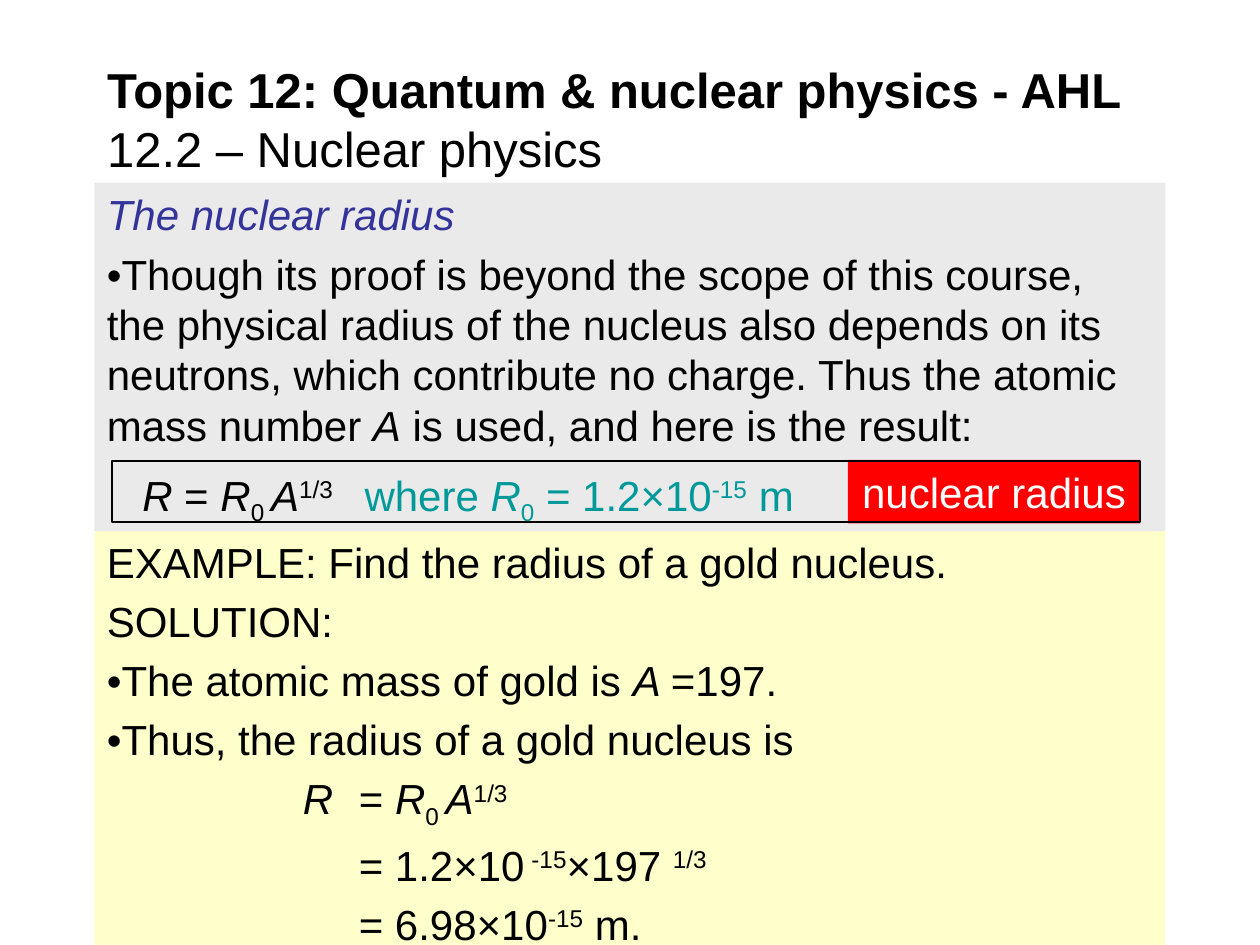
import dataclasses
import typing

import pptx
import pptx.dml.color
import pptx.enum.shapes
import pptx.enum.text
import pptx.oxml.ns
import pptx.util
from lxml import etree

Pt = pptx.util.Pt
RGBColor = pptx.dml.color.RGBColor
ALIGN = pptx.enum.text.PP_ALIGN
ANCHOR = pptx.enum.text.MSO_ANCHOR

BLACK = RGBColor(0x00, 0x00, 0x00)
WHITE = RGBColor(0xFF, 0xFF, 0xFF)
GREY = RGBColor(0xEA, 0xEA, 0xEA)
CREAM = RGBColor(0xFF, 0xFF, 0xCC)
RED = RGBColor(0xFF, 0x00, 0x00)
NAVY = RGBColor(0x33, 0x33, 0x99)
TEAL = RGBColor(0x00, 0x99, 0x99)

MARGIN = 54
CONTENT_WIDTH = 612
SUBSCRIPT, SUPERSCRIPT = -25000, 30000


@dataclasses.dataclass(frozen=True)
class Run:
    text: str
    italic: bool = False
    bold: bool = False
    baseline: int = 0
    color: RGBColor = BLACK
    size: float = 24


@dataclasses.dataclass(frozen=True)
class Line:
    runs: tuple[Run, ...]
    space_before: float = 5
    line_spacing: float = 1.0
    alignment: typing.Any = ALIGN.LEFT
    tab_stops: tuple[float, ...] = ()


@dataclasses.dataclass(frozen=True)
class Box:
    left: float
    top: float
    width: float
    height: float
    fill: RGBColor | None = None
    outline: RGBColor | None = None
    lines: tuple[Line, ...] = ()


def radius_formula(color: RGBColor = BLACK) -> tuple[Run, ...]:
    """Runs of R0 A^(1/3)."""
    return (Run("R", italic=True, color=color), Run("0 ", baseline=SUBSCRIPT, color=color),
            Run("A", italic=True, color=color), Run("1/3", baseline=SUPERSCRIPT, color=color))


EQUATION_TABS = (112, 144)

EXAMPLE = Box(MARGIN, 303, CONTENT_WIDTH, 237, fill=CREAM, lines=(
    Line((Run("EXAMPLE: Find the radius of a gold nucleus."),)),
    Line((Run("SOLUTION:"),)),
    Line((Run("•The atomic mass of gold is "), Run("A ", italic=True), Run("=197."))),
    Line((Run("•Thus, the radius of a gold nucleus is"),)),
    Line((Run("\tR", italic=True), Run(" \t= "), *radius_formula()), tab_stops=EQUATION_TABS),
    Line((Run("\t\t= 1.2×10"), Run(" -15", baseline=SUPERSCRIPT), Run("×197 "),
          Run("1/3", baseline=SUPERSCRIPT)), tab_stops=EQUATION_TABS),
    Line((Run("\t\t= 6.98×10"), Run("-15", baseline=SUPERSCRIPT), Run(" m.")),
         tab_stops=EQUATION_TABS),
))

EXPLANATION = Box(MARGIN, 104.4, CONTENT_WIDTH, 199.2, fill=GREY, lines=(
    Line((Run("The nuclear radius", italic=True, color=NAVY),), space_before=0),
    Line((Run("•Though its proof is beyond the scope of this course, the physical radius "
              "of the nucleus also depends on its neutrons, which contribute no charge. "
              "Thus the atomic mass number "),
          Run("A", italic=True), Run(" is used, and here is the result:"))),
))

FORMULA_PARTS = (
    Box(74.2, 265, 431.3, 28, lines=(
        Line((Run("R", italic=True), Run(" = "), *radius_formula(),
              Run("\twhere ", color=TEAL), Run("R", italic=True, color=TEAL),
              Run("0", baseline=SUBSCRIPT, color=TEAL), Run(" = 1.2×10", color=TEAL),
              Run("-15", baseline=SUPERSCRIPT, color=TEAL), Run(" m", color=TEAL)),
             line_spacing=0.9, tab_stops=(127,)),)),
    Box(484.5, 262.8, 167, 36.4, fill=RED, lines=(
        Line((Run("nuclear radius", color=WHITE),), alignment=ALIGN.CENTER),)),
    Box(64, 263.5, 587.5, 35, outline=BLACK),
)

TITLE_RUNS = (Run("Topic 12: Quantum & nuclear physics - AHL", bold=True, size=28),
              Run("12.2 – Nuclear physics", size=28))


def add_run(paragraph: typing.Any, content: Run) -> None:
    run = paragraph.add_run()
    run.text = content.text
    run.font.color.rgb = content.color
    settings = {"name": "Arial", "size": Pt(content.size),
                "italic": content.italic, "bold": content.bold}
    for name, value in settings.items():
        setattr(run.font, name, value)
    if content.baseline:
        run.font._element.set("baseline", str(content.baseline))


def set_tab_stops(paragraph: typing.Any, positions: tuple[float, ...]) -> None:
    qn = pptx.oxml.ns.qn
    tab_list = etree.SubElement(paragraph._p.get_or_add_pPr(), qn("a:tabLst"))
    for position in positions:
        etree.SubElement(tab_list, qn("a:tab"), pos=str(int(Pt(position))), algn="l")


def write_lines(frame: typing.Any, lines: tuple[Line, ...]) -> None:
    frame.word_wrap = True
    frame.vertical_anchor = ANCHOR.TOP
    for index, line in enumerate(lines):
        paragraph = frame.add_paragraph() if index else frame.paragraphs[0]
        settings = {"alignment": line.alignment, "space_before": Pt(line.space_before),
                    "line_spacing": line.line_spacing}
        for name, value in settings.items():
            setattr(paragraph, name, value)
        if line.tab_stops:
            set_tab_stops(paragraph, line.tab_stops)
        for content in line.runs:
            add_run(paragraph, content)


def add_box(shapes: typing.Any, box: Box) -> None:
    place = [Pt(value) for value in (box.left, box.top, box.width, box.height)]
    if box.fill is None and box.outline is None:
        shape = shapes.add_textbox(*place)
    else:
        shape = shapes.add_shape(pptx.enum.shapes.MSO_SHAPE.RECTANGLE, *place)
        shape.shadow.inherit = False
        for form, color in ((shape.fill, box.fill), (shape.line.fill, box.outline)):
            if color is None:
                form.background()
            else:
                form.solid()
                form.fore_color.rgb = color
        if box.outline is not None:
            shape.line.width = Pt(1)
    if box.lines:
        write_lines(shape.text_frame, box.lines)


def add_title(slide: typing.Any) -> None:
    title = slide.shapes.title
    place = {"left": MARGIN, "top": 32.4, "width": CONTENT_WIDTH, "height": 70.6}
    for name, value in place.items():
        setattr(title, name, Pt(value))
    frame = title.text_frame
    frame.auto_size = pptx.enum.text.MSO_AUTO_SIZE.NONE
    frame.vertical_anchor = ANCHOR.MIDDLE
    paragraph = frame.paragraphs[0]
    paragraph.alignment = ALIGN.LEFT
    heading, section = TITLE_RUNS
    add_run(paragraph, heading)
    paragraph.add_line_break()
    add_run(paragraph, section)


def main() -> None:
    presentation = pptx.Presentation()
    presentation.slide_width, presentation.slide_height = Pt(720), Pt(540)
    slide = presentation.slides.add_slide(presentation.slide_layouts[5])
    add_title(slide)
    for box in (EXAMPLE, EXPLANATION):
        add_box(slide.shapes, box)
    formula_group = slide.shapes.add_group_shape()
    for box in FORMULA_PARTS:
        add_box(formula_group.shapes, box)
    presentation.save("out.pptx")


if __name__ == "__main__":
    main()
